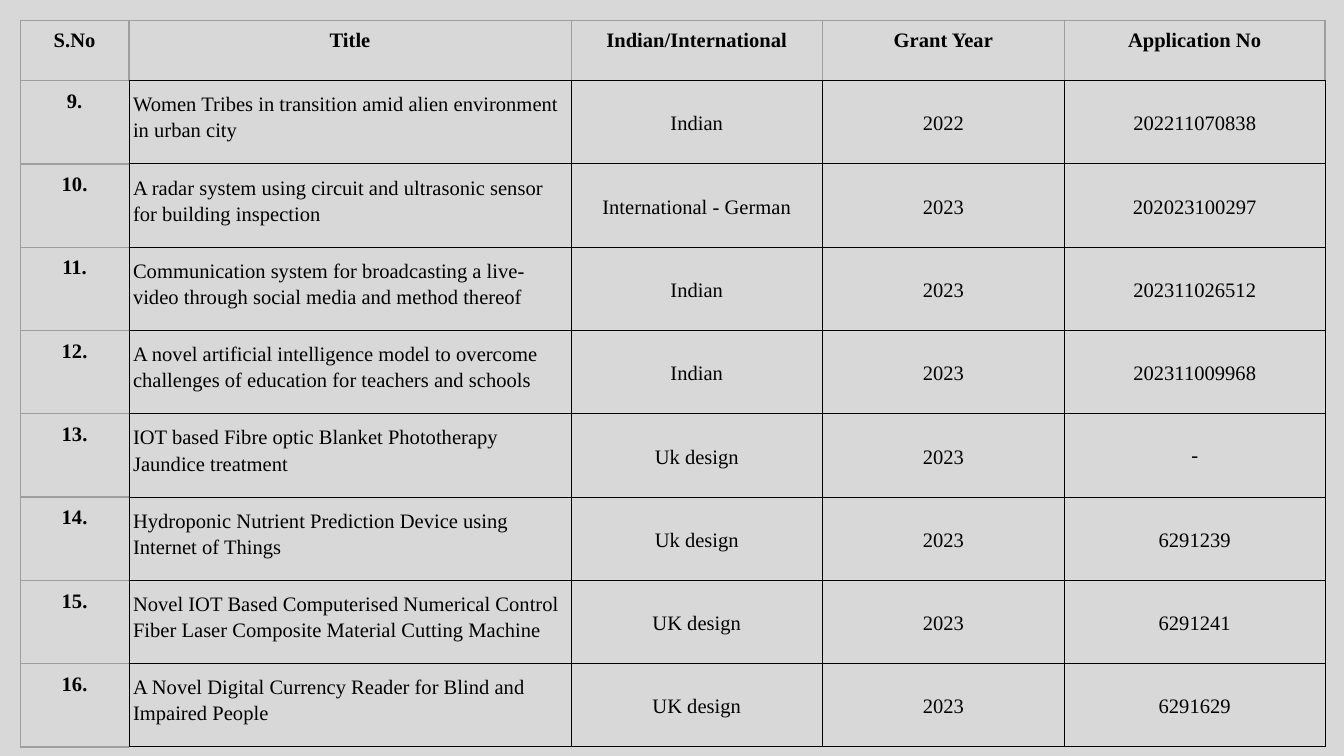
from lxml import etree
from pptx import Presentation
from pptx import util as u
from pptx.dml.color import RGBColor
from pptx.enum import text
from pptx.oxml.ns import qn

COLORS = {"back": "D8D8D8", "ink": "000000", "grey": "9E9E9E"}
COLS = [0.81, 3.29, 1.87, 1.8, 1.94]
HEAD_H, ROW_H = 0.45, 0.62
FONT = {"name": "Times New Roman", "size": u.Pt(11)}
ROWS = [
    ("S.No", "Title", "Indian/International", "Grant Year", "Application No"),
    ("9.", "Women Tribes in transition amid alien environment in urban city",
     "Indian", "2022", "202211070838"),
    ("10.", "A radar system using circuit and ultrasonic sensor for building inspection",
     "International - German", "2023", "202023100297"),
    ("11.", "Communication system for broadcasting a live-video through social media and method thereof",
     "Indian", "2023", "202311026512"),
    ("12.", "A novel artificial intelligence model to overcome challenges of education for teachers and schools",
     "Indian", "2023", "202311009968"),
    ("13.", "IOT based Fibre optic Blanket Phototherapy Jaundice treatment",
     "Uk design", "2023", "-"),
    ("14.", "Hydroponic Nutrient Prediction Device using Internet of Things",
     "Uk design", "2023", "6291239"),
    ("15.", "Novel IOT Based Computerised Numerical Control Fiber Laser Composite Material Cutting Machine",
     "UK design", "2023", "6291241"),
    ("16.", "A Novel Digital Currency Reader for Blind and Impaired People",
     "UK design", "2023", "6291629"),
]


def set_borders(cell, sides):
    tc_pr = cell._tc.get_or_add_tcPr()
    for i, (side, color) in enumerate(sides.items()):
        width = u.Pt(0.75 if color == "grey" else 0.5)
        ln = etree.Element(qn(f"a:ln{side}"), w=str(width))
        fill = etree.SubElement(ln, qn("a:solidFill"))
        etree.SubElement(fill, qn("a:srgbClr"), val=COLORS[color])
        tc_pr.insert(i, ln)


prs = Presentation()
prs.slide_width = u.Inches(10)
prs.slide_height = u.Inches(10 * 9 / 16)
s = prs.slides.add_slide(prs.slide_layouts[6])
s.background.fill.solid()
s.background.fill.fore_color.rgb = RGBColor.from_string(COLORS["back"])

height = HEAD_H + ROW_H * (len(ROWS) - 1)
table = s.shapes.add_table(len(ROWS), len(COLS), u.Inches(0.15), u.Inches(0.15),
                           u.Inches(sum(COLS)), u.Inches(height)).table
table.first_row = table.horz_banding = False
for col, width in zip(table.columns, COLS):
    col.width = u.Inches(width)

for r, values in enumerate(ROWS):
    table.rows[r].height = u.Inches(ROW_H if r else HEAD_H)
    for c, value in enumerate(values):
        cell = table.cell(r, c)
        label = r == 0 or c == 0
        side_gap = u.Inches(0.1 if label else 0.03)
        layout = {"margin_left": side_gap, "margin_right": side_gap,
                  "margin_top": u.Inches(0.07), "margin_bottom": u.Inches(0.07),
                  "vertical_anchor": text.MSO_ANCHOR.TOP if label or c == 1
                  else text.MSO_ANCHOR.MIDDLE}
        for key, setting in layout.items():
            setattr(cell, key, setting)
        cell.fill.background()

        p = cell.text_frame.paragraphs[0]
        p.alignment = text.PP_ALIGN.LEFT if r and c == 1 else text.PP_ALIGN.CENTER
        if not label and value != "-":
            p.line_spacing = 1.15
        run = p.add_run()
        run.text = value
        for key, setting in {**FONT, "bold": label}.items():
            setattr(run.font, key, setting)
        run.font.color.rgb = RGBColor.from_string(COLORS["ink"])

        sides = dict.fromkeys("LRTB", "grey" if label else "ink")
        if r == 0 and c:
            sides["B"] = "ink"
        elif r and c == 0:
            sides["R"] = "ink"
        set_borders(cell, sides)

prs.save("out.pptx")
